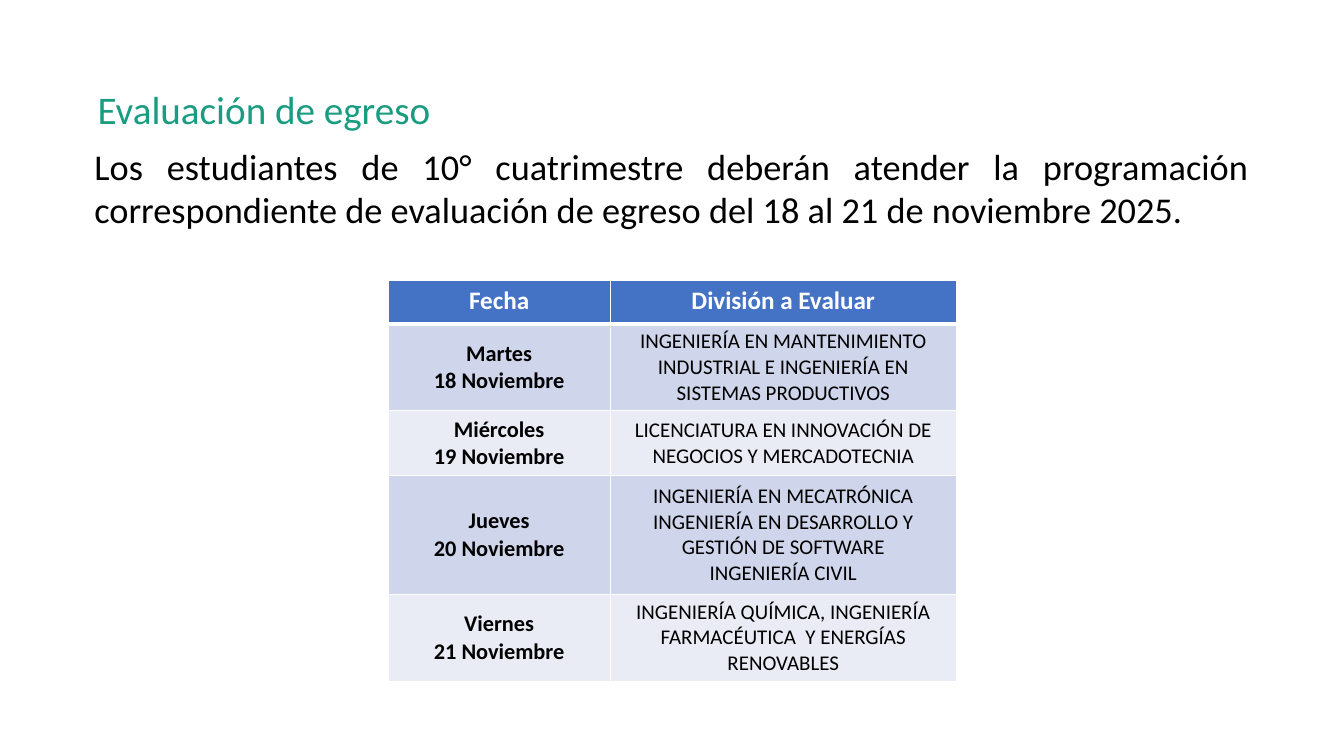
from lxml import etree
from pptx import Presentation
from pptx.dml.color import RGBColor
from pptx.enum.text import MSO_ANCHOR, MSO_AUTO_SIZE, PP_ALIGN
from pptx.oxml.ns import qn
from pptx.util import Cm, Pt

COLORS = {
    "title": "199C7F",
    "text": "000000",
    "white": "FFFFFF",
    "header": "4472C4",
    "band_dark": "CFD5EA",
    "band_light": "E9EBF5",
}
FONT = "Calibri"
HEADERS = ["Fecha", "División a Evaluar"]
SCHEDULE = [
    (["Martes", "18 Noviembre"],
     ["INGENIERÍA EN MANTENIMIENTO INDUSTRIAL E INGENIERÍA EN SISTEMAS PRODUCTIVOS"]),
    (["Miércoles", "19 Noviembre"],
     ["LICENCIATURA EN INNOVACIÓN DE NEGOCIOS Y MERCADOTECNIA"]),
    (["Jueves", "20 Noviembre"],
     ["INGENIERÍA EN MECATRÓNICA INGENIERÍA EN DESARROLLO Y GESTIÓN DE SOFTWARE",
      "INGENIERÍA CIVIL"]),
    (["Viernes", "21 Noviembre"],
     ["INGENIERÍA QUÍMICA, INGENIERÍA FARMACÉUTICA  Y ENERGÍAS RENOVABLES"]),
]
COL_WIDTHS = [5.61, 8.74]
ROW_HEIGHTS = [1.09, 1.63, 1.63, 3, 1.63]
TABLE_HEIGHT = 10.03


def add_run(p, text, size, color, bold=False):
    r = p.add_run()
    r.text = text
    r.font.name = FONT
    r.font.size = Pt(size)
    r.font.bold = bold
    r.font.color.rgb = RGBColor.from_string(COLORS[color])


def fill_placeholder(sp, box, text, size, color, align, anchor, spacing):
    sp.left, sp.top, sp.width, sp.height = map(Cm, box)
    tf = sp.text_frame
    tf.word_wrap = True
    tf.auto_size = MSO_AUTO_SIZE.NONE
    tf.vertical_anchor = anchor
    p = tf.paragraphs[0]
    pPr = p._p.get_or_add_pPr()
    pPr.set("marL", "0")
    pPr.set("indent", "0")
    etree.SubElement(pPr, qn("a:buNone"))
    p.alignment = align
    p.line_spacing = spacing
    p.space_before = Pt(0)
    add_run(p, text, size, color)


def set_borders(cell, bottom):
    tcPr = cell._tc.get_or_add_tcPr()
    for side, width in (("L", 1), ("R", 1), ("T", 1), ("B", bottom)):
        ln = etree.SubElement(tcPr, qn(f"a:ln{side}"), w=str(Pt(width)))
        fill = etree.SubElement(ln, qn("a:solidFill"))
        etree.SubElement(fill, qn("a:srgbClr"), val=COLORS["white"])


def fill_cell(cell, lines, size, color, bold, fill, anchor, bottom=1):
    set_borders(cell, bottom)
    cell.fill.solid()
    cell.fill.fore_color.rgb = RGBColor.from_string(COLORS[fill])
    cell.vertical_anchor = anchor
    tf = cell.text_frame
    for i, line in enumerate(lines):
        p = tf.add_paragraph() if i else tf.paragraphs[0]
        p.alignment = PP_ALIGN.CENTER
        add_run(p, line, size, color, bold)


def add_schedule(s, left, top):
    frame = s.shapes.add_table(len(ROW_HEIGHTS), len(COL_WIDTHS), Cm(left), Cm(top),
                               Cm(sum(COL_WIDTHS)), Cm(TABLE_HEIGHT))
    table = frame.table
    for column, width in zip(table.columns, COL_WIDTHS):
        column.width = Cm(width)
    for row, height in zip(table.rows, ROW_HEIGHTS):
        row.height = Cm(height)
    frame.height = Cm(TABLE_HEIGHT)
    for i, header in enumerate(HEADERS):
        fill_cell(table.cell(0, i), [header], 18, "white", True, "header",
                  MSO_ANCHOR.TOP, bottom=3)
    for i, (date, division) in enumerate(SCHEDULE, 1):
        band = "band_dark" if i % 2 else "band_light"
        fill_cell(table.cell(i, 0), date, 16, "text", True, band, MSO_ANCHOR.MIDDLE)
        fill_cell(table.cell(i, 1), division, 15, "text", False, band, MSO_ANCHOR.MIDDLE)


def main():
    prs = Presentation()
    prs.slide_width, prs.slide_height = Cm(33.94), Cm(19.05)
    s = prs.slides.add_slide(prs.slide_layouts[1])
    fill_placeholder(s.shapes.title, (2.21, 2.13, 16.97, 1.37), "Evaluación de egreso",
                     28, "title", PP_ALIGN.LEFT, MSO_ANCHOR.MIDDLE, 0.9)
    fill_placeholder(s.placeholders[1], (2.13, 3.51, 29.69, 3.58),
                     "Los estudiantes de 10° cuatrimestre deberán atender la programación "
                     "correspondiente de evaluación de egreso del 18 al 21 de noviembre 2025.",
                     26, "text", PP_ALIGN.JUSTIFY, MSO_ANCHOR.TOP, 1.0)
    add_schedule(s, 9.8, 7.09)
    prs.save("out.pptx")


if __name__ == "__main__":
    main()
